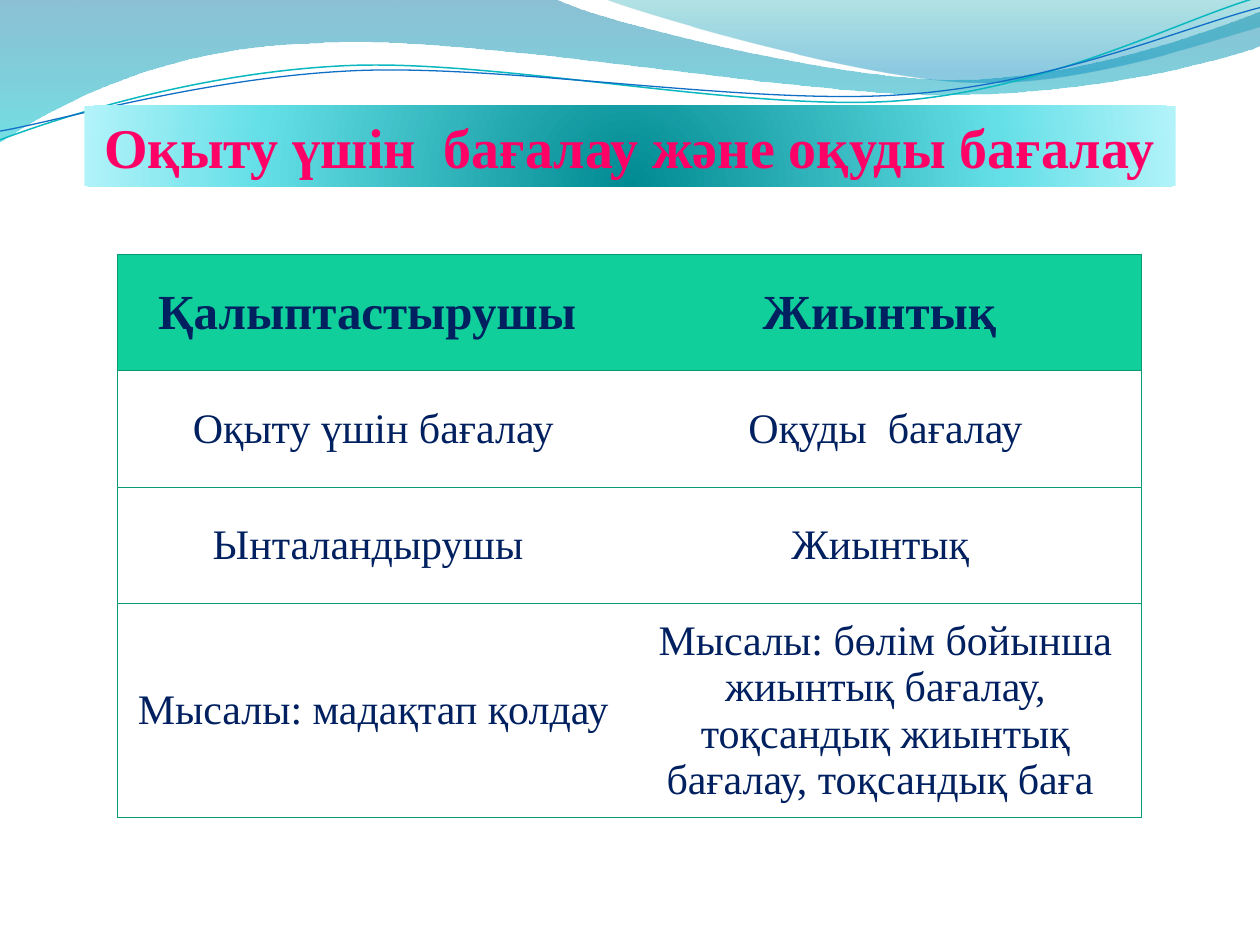
"""Build a slide comparing two kinds of assessment under a wavy banner."""
import math

import pptx
import pptx.oxml
import pptx.oxml.ns
import pptx.util
from pptx.dml.color import RGBColor
from pptx.enum.text import MSO_ANCHOR, MSO_AUTO_SIZE, PP_ALIGN
from pptx.util import Inches

FONT = "Times New Roman"
TILT = 2.7
HEX = {
    "navy": "002060", "pink": "FF0066", "green": "10CF9B", "edge": "0A9B74",
    "teal": "0AB8BF", "blue": "0F6FC6",
}
ROWS = [
    ("Қалыптастырушы ", "Жиынтық "),
    ("Оқыту үшін бағалау", "Оқуды  бағалау"),
    ("Ынталандырушы ", "Жиынтық "),
    ("Мысалы: мадақтап қолдау",
     "Мысалы: бөлім бойынша жиынтық бағалау, "
     "тоқсандық жиынтық бағалау, тоқсандық баға "),
]
LOW = [
    [(0, 0)], [(4.4, -0.01)],
    [(4.76, 0.17), (6.64, 0.63), (7.58, 0.63)],
    [(8.53, 0.63), (9.58, 0.26), (10, 0.09)], [(10.01, 0.36)],
    [(9.83, 0.44), (8.7, 0.76), (7.46, 0.75)],
    [(6.22, 0.75), (3.82, 0.28), (2.57, 0.34)],
    [(1.29, 0.36), (0.46, 0.83), (-0.01, 1.13)],
]
HIGH = [
    [(4.79, -0.01)],
    [(5.09, 0.11), (6.82, 0.62), (7.69, 0.65)],
    [(8.56, 0.69), (9.61, 0.32), (10, 0.21)], [(10, 0)],
]
THICK = [
    [(0, 1.11)],
    [(0.48, 0.93), (1.58, 0.57), (2.77, 0.52)],
    [(3.95, 0.47), (5.93, 0.89), (7.13, 0.8)],
    [(8.33, 0.71), (9.38, 0.15), (9.98, -0.02)],
]
THIN = [
    [(0, 1.04)],
    [(0.47, 0.96), (1.64, 0.61), (2.83, 0.56)],
    [(4.03, 0.51), (5.97, 0.84), (7.17, 0.75)],
    [(8.36, 0.67), (9.41, 0.21), (10, 0.06)],
]
LINEAR = '<a:lin ang="5400000" scaled="0"/>'
ROUND = ('<a:path path="circle"><a:fillToRect l="50000" t="130000" '
         'r="50000" b="-30000"/></a:path>')


def parse(tag, body="", attrs=""):
    """Return a DrawingML element."""
    space = pptx.oxml.ns.nsdecls("a")
    return pptx.oxml.parse_xml(f"<a:{tag} {space} {attrs}>{body}</a:{tag}>")


def shade(shape, stops, way):
    """Fill a shape with a gradient of (place, colour, opacity) stops."""
    body = "".join(
        f'<a:gs pos="{place * 1000}"><a:srgbClr val="{tint}">'
        f'<a:alpha val="{alpha * 1000}"/></a:srgbClr></a:gs>'
        for place, tint, alpha in stops)
    shape.fill.background()
    props = shape._element.spPr
    blank = props.find(pptx.oxml.ns.qn("a:noFill"))
    props.replace(blank, parse("gradFill", f"<a:gsLst>{body}</a:gsLst>{way}"))


def bend(shape, parts):
    """Merge each run of three line segments into one cubic curve."""
    segs = list(shape._element.iter(pptx.oxml.ns.qn("a:lnTo")))
    for part in parts[1:]:
        group, segs = segs[:len(part)], segs[len(part):]
        if len(part) == 3:
            curve = parse("cubicBezTo")
            group[0].addprevious(curve)
            for seg in group:
                curve.append(seg[0])
                seg.getparent().remove(seg)


def add_path(slide, parts, close):
    """Add a freeform without fill or shadow."""
    spots = [(Inches(x), Inches(y)) for part in parts for x, y in part]
    pen = slide.shapes.build_freeform(*spots[0])
    pen.add_line_segments(spots[1:], close=close)
    shape = pen.convert_to_shape()
    bend(shape, parts)
    shape.shadow.inherit = False
    shape.fill.background()
    return shape


def add_wave(slide, parts, stops):
    """Add a shaded wave."""
    shape = add_path(slide, parts, True)
    shade(shape, stops, LINEAR)
    shape.line.fill.background()


def turn(parts, mid):
    """Turn all points clockwise by the tilt about a middle point."""
    cos, sin = math.cos(math.radians(TILT)), math.sin(math.radians(TILT))
    a, b = mid
    return [[(a + (x - a) * cos - (y - b) * sin, b + (x - a) * sin + (y - b) * cos)
             for x, y in part] for part in parts]


def add_curve(slide, parts, mid, tint, width):
    """Add an open curved line that is tilted back into place."""
    shape = add_path(slide, turn(parts, mid), False)
    shape.rotation = 360 - TILT
    shape.line.color.rgb = RGBColor.from_string(HEX[tint])
    shape.line.width = pptx.util.Pt(width)


def put_text(frame, text, size=24, tint="navy", bold=False):
    """Write one centred paragraph."""
    para = frame.paragraphs[0]
    para.alignment = PP_ALIGN.CENTER
    run = para.add_run()
    run.text = text
    run.font.name = FONT
    run.font.size = pptx.util.Pt(size)
    run.font.bold = bold
    run.font.color.rgb = RGBColor.from_string(HEX[tint])


def add_edges(cell, col):
    """Rule a cell on every side but the one between the columns."""
    props = cell._tc.get_or_add_tcPr()
    solid = f'<a:solidFill><a:srgbClr val="{HEX["edge"]}"/></a:solidFill>'
    inner = "R" if col == 0 else "L"
    for side in "LRTB":
        body = "<a:noFill/>" if side == inner else solid
        props.append(parse("ln" + side, body, 'w="9525"'))


def add_grid(slide):
    """Add the comparison table."""
    grid = slide.shapes.add_table(
        len(ROWS), 2, Inches(0.93), Inches(2.02), Inches(8.13), Inches(4.48)).table
    grid.horz_banding = False
    short = Inches(2.77) // 3
    for row, high in zip(grid.rows, (short, short, short, Inches(1.7))):
        row.height = high
    for r, texts in enumerate(ROWS):
        head = r == 0
        for c, text in enumerate(texts):
            cell = grid.cell(r, c)
            cell.vertical_anchor = MSO_ANCHOR.MIDDLE
            add_edges(cell, c)
            if head:
                cell.fill.solid()
                cell.fill.fore_color.rgb = RGBColor.from_string(HEX["green"])
            else:
                cell.fill.background()
            put_text(cell.text_frame, text, size=28 if head else 24, bold=head)


def set_title(slide):
    """Format the title as a shaded band in front."""
    title = slide.shapes.title
    title.left, title.top = Inches(0.67), Inches(0.84)
    title.width, title.height = Inches(8.66), Inches(0.64)
    shade(title, [(0, "008A91", 100), (68, "64DFE7", 100), (100, "B1F3F9", 100)], ROUND)
    frame = title.text_frame
    frame.auto_size = MSO_AUTO_SIZE.NONE
    frame.word_wrap = True
    frame.vertical_anchor = MSO_ANCHOR.MIDDLE
    put_text(frame, "Оқыту үшін  бағалау және оқуды бағалау",
             size=32, tint="pink", bold=True)
    slide.shapes._spTree.append(title._element)


def main():
    """Build and save the slide."""
    deck = pptx.Presentation()
    deck.slide_width, deck.slide_height = Inches(10), Inches(7.5)
    slide = deck.slides.add_slide(deck.slide_layouts[5])
    add_wave(slide, LOW, [(0, "0074A1", 45), (100, "00C6CF", 55)])
    add_wave(slide, HIGH, [(0, "00A1A9", 30), (80, "008BBF", 45)])
    add_curve(slide, THICK, (4.99, 0.58), "teal", 0.85)
    add_curve(slide, THIN, (4.99, 0.59), "blue", 0.75)
    add_grid(slide)
    set_title(slide)
    deck.save("out.pptx")


if __name__ == "__main__":
    main()
